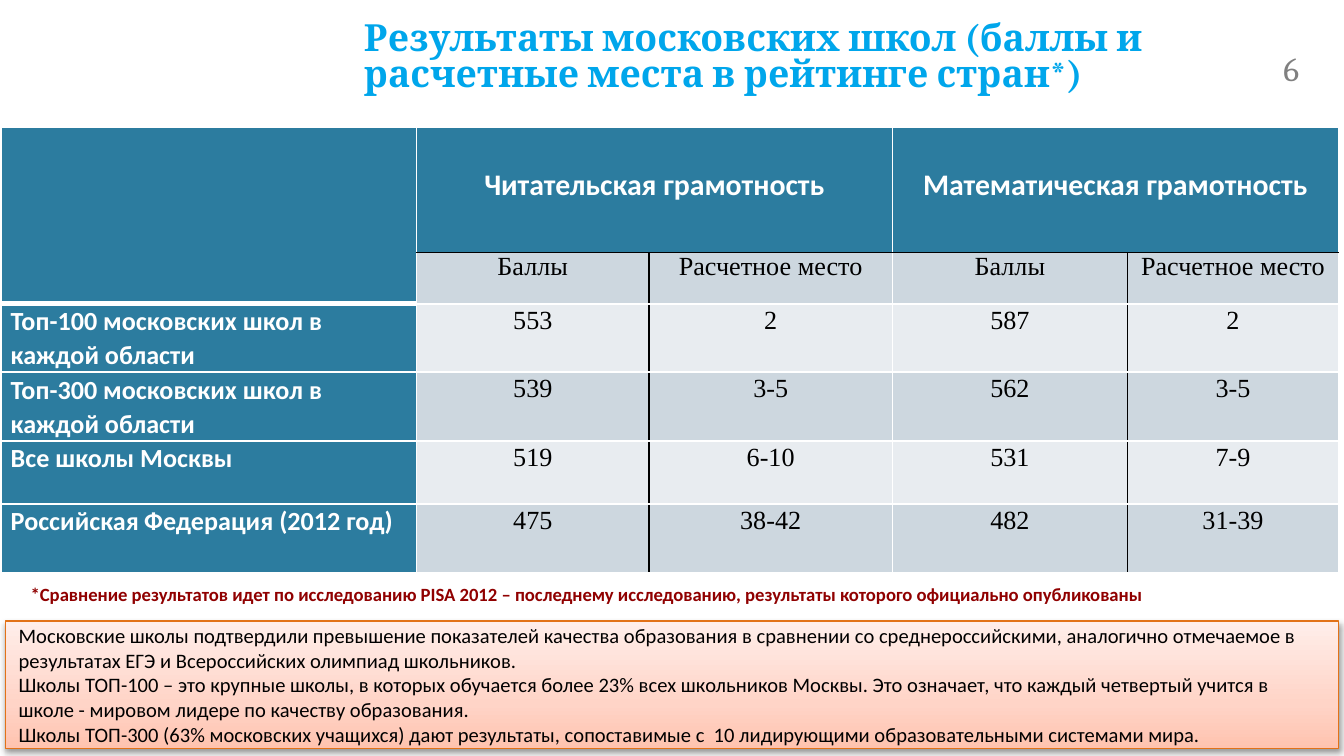
from copy import deepcopy

from lxml.etree import SubElement
from pptx import Presentation
from pptx.dml.color import RGBColor
from pptx.enum.shapes import MSO_SHAPE
from pptx.enum.text import MSO_ANCHOR, PP_ALIGN
from pptx.oxml.ns import qn
from pptx.util import Inches, Pt

WHITE, BLACK = "FFFFFF", "000000"
TEAL, BLUE_GREY, PALE = "2C7C9F", "CDD7DF", "E8ECF0"


def rgb(value):
    return RGBColor.from_string(value)


def add_run(p, text, size, font, color, bold=False):
    r = p.add_run()
    r.text = text
    r.font.size = Pt(size)
    r.font.name = font
    r.font.bold = bold
    r.font.color.rgb = rgb(color)


# 16:9 slide
prs = Presentation()
prs.slide_width, prs.slide_height = Inches(10), Inches(10 * 9 / 16)
s = prs.slides.add_slide(prs.slide_layouts[6])

# Results table: row label runs, then four values
col_widths = [3.09, 1.73, 1.81, 1.75, 1.57]
row_heights = [0.93, 0.38, 0.51, 0.51, 0.47, 0.51]
rows = [
    [[], "Читательская грамотность", "", "Математическая грамотность", ""],
    [[], "Баллы", "Расчетное место", "Баллы", "Расчетное место"],
    [[("Топ-100 московских школ в каждой области", 14)], "553", "2", "587", "2"],
    [[("Топ-300 московских школ в каждой области", 14)], "539", "3-5", "562", "3-5"],
    [[("Все школы Москвы", 14)], "519", "6-10", "531", "7-9"],
    [[("Российская", 14), (" ", 12), ("Федерация (2012 год)", 14)],
     "475", "38-42", "482", "31-39"],
]
table = s.shapes.add_table(
    len(rows), len(col_widths), Inches(0.01), Inches(0.95),
    Inches(sum(col_widths)), Inches(sum(row_heights))).table
table.first_row = table.horz_banding = False
for col, width in zip(table.columns, col_widths):
    col.width = Inches(width)
for row, height in zip(table.rows, row_heights):
    row.height = Inches(height)
table.cell(0, 0).merge(table.cell(1, 0))
for first in (1, 3):
    table.cell(0, first).merge(table.cell(0, first + 1))

for i, row in enumerate(rows):
    for j, content in enumerate(row):
        cell = table.cell(i, j)
        header = i == 0 or j == 0
        cell.margin_left = cell.margin_right = Inches(0.07)
        cell.margin_top = cell.margin_bottom = 0

        # Borders: black under the header and between paired columns
        borders = {side: (WHITE, 1) for side in ("lnL", "lnR", "lnT", "lnB")}
        if i > 0 and j in (1, 3):
            borders["lnR"] = (BLACK, 1)
        if i > 0 and j in (2, 4):
            borders["lnL"] = (BLACK, 1)
        if j > 0 and i < 2:
            borders["lnB" if i == 0 else "lnT"] = (BLACK, 1)
        if j == 0 and i < 3:
            borders["lnT" if i == 2 else "lnB"] = (WHITE, 3)
        tcPr = cell._tc.get_or_add_tcPr()
        for side, (color, width) in borders.items():
            ln = SubElement(tcPr, qn(f"a:{side}"), w=str(Pt(width)))
            fill = SubElement(ln, qn("a:solidFill"))
            SubElement(fill, qn("a:srgbClr"), val=color)

        cell.fill.solid()
        cell.fill.fore_color.rgb = rgb(TEAL if header else BLUE_GREY if i % 2 else PALE)

        # Text
        p = cell.text_frame.paragraphs[0]
        if i != 1:
            p.line_spacing = 1.07
        if j == 0:
            for text, size in content:
                add_run(p, text, size, "Calibri", WHITE, True)
        elif content:
            p.alignment = PP_ALIGN.CENTER
            if i == 0:
                cell.vertical_anchor = MSO_ANCHOR.MIDDLE
                cell.margin_bottom = Inches(0.09)
                add_run(p, content, 16, "Calibri", WHITE, True)
            else:
                add_run(p, content, 14, "Times New Roman", BLACK)

# Slide number, title and footnote
title = "Результаты московских школ (баллы и расчетные места в рейтинге стран*)"
footnote = ("*Сравнение результатов идет по исследованию PISA 2012 – последнему "
            "исследованию, результаты которого официально опубликованы")
for box, text, size, font, color, bold, spacing, anchor in [
    ((9.45, 0.31, 0.55, 0.3), "6", 18, "Cambria", "808080", False, 1, MSO_ANCHOR.TOP),
    ((2.61, 0.12, 6.83, 0.63), title, 20, "Cambria", "00A6EB", True, 0.8, MSO_ANCHOR.MIDDLE),
    ((0.13, 4.29, 9.61, 0.27), footnote, 10, "Calibri", "900000", True, 1, MSO_ANCHOR.TOP),
]:
    tf = s.shapes.add_textbox(*map(Inches, box)).text_frame
    tf.word_wrap = True
    tf.vertical_anchor = anchor
    p = tf.paragraphs[0]
    p.line_spacing = spacing
    add_run(p, text, size, font, color, bold)

# Conclusions panel with gradient and soft shadow
sp = s.shapes.add_shape(MSO_SHAPE.RECTANGLE, Inches(0.04), Inches(4.62),
                        Inches(9.92), Inches(0.95))
sp.fill.gradient()
sp.fill.gradient_angle = 90
stops = sp._element.spPr.find(qn("a:gradFill")).find(qn("a:gsLst"))
stops.insert(1, deepcopy(stops[0]))
for stop, (position, color) in zip(
        sp.fill.gradient_stops, [(0, "FFC3AF"), (0.35, "FFD4C7"), (1, "FFEEEA")]):
    stop.position = position
    stop.color.rgb = rgb(color)
sp.line.color.rgb = rgb("E27218")
sp.line.width = Pt(0.75)
sp.shadow.inherit = False
effects = sp._element.spPr.find(qn("a:effectLst"))
shadow = SubElement(effects, qn("a:outerShdw"), blurRad=str(Pt(3.1)),
                    dist=str(Pt(1.6)), dir="5400000", rotWithShape="0")
shade = SubElement(shadow, qn("a:srgbClr"), val=BLACK)
SubElement(shade, qn("a:alpha"), val="38000")

conclusions = [
    "Московские школы подтвердили превышение показателей качества образования в "
    "сравнении со среднероссийскими, аналогично отмечаемое в результатах ЕГЭ и "
    "Всероссийских олимпиад школьников.",
    "Школы ТОП-100 – это крупные школы, в которых обучается более 23% всех школьников "
    "Москвы. Это означает, что каждый четвертый учится в школе - мировом лидере по "
    "качеству образования.",
    "Школы ТОП-300 (63% московских учащихся) дают результаты, сопоставимые с  10 "
    "лидирующими образовательными системами мира.",
]
tf = sp.text_frame
tf.word_wrap = True
tf.vertical_anchor = MSO_ANCHOR.MIDDLE
for n, text in enumerate(conclusions):
    p = tf.add_paragraph() if n else tf.paragraphs[0]
    p.alignment = PP_ALIGN.LEFT
    add_run(p, text, 11, "Calibri", BLACK)

prs.save("out.pptx")
